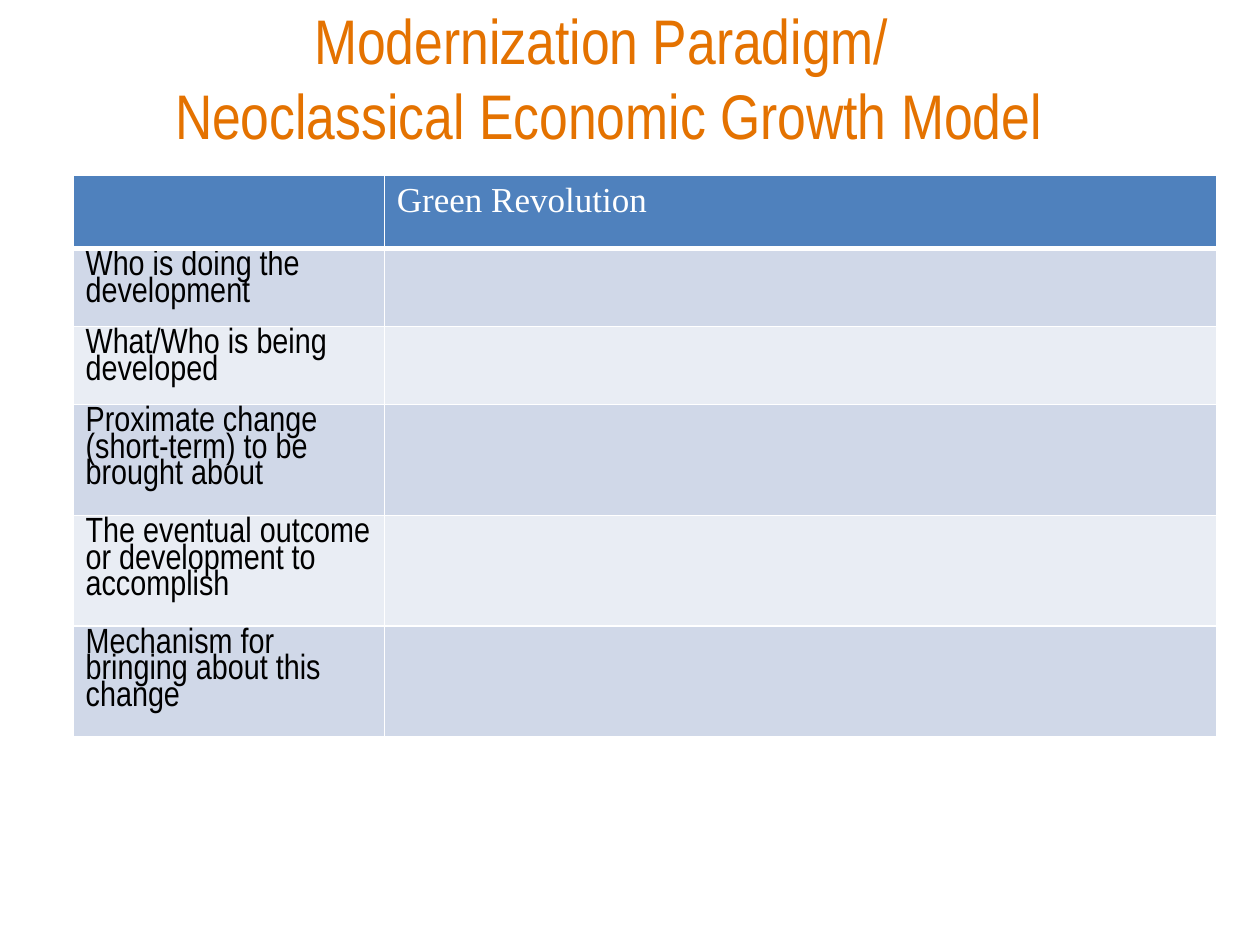
"""Builds the Green Revolution slide on the modernization paradigm."""
from lxml import etree
from pptx import Presentation
from pptx.dml.color import RGBColor
from pptx.enum import text
from pptx.oxml import ns
from pptx.util import Inches, Pt

ORANGE = RGBColor(0xE4, 0x72, 0x00)
BLUE = RGBColor(0x4F, 0x81, 0xBD)
BANDS = RGBColor(0xD0, 0xD8, 0xE8), RGBColor(0xE9, 0xED, 0xF4)
WHITE = RGBColor(0xFF, 0xFF, 0xFF)
BLACK = RGBColor(0x00, 0x00, 0x00)

TITLE = "Modernization Paradigm/ \vNeoclassical Economic Growth Model"
ROWS = [
    ("", "Green Revolution", 0.58),
    ("Who is doing the development", "", 0.62),
    ("What/Who is being developed", "", 0.62),
    ("Proximate change (short-term) to be brought about", "", 0.88),
    ("The eventual outcome or development to accomplish", "", 0.88),
    ("Mechanism for bringing about this change", "", 0.88),
]


class Deck:
    narrow = "Arial Narrow"
    serif = "Times New Roman"

    def __init__(self):
        self.prs = Presentation()
        self.prs.slide_width, self.prs.slide_height = Inches(10), Inches(7.5)
        self.slide = self.prs.slides.add_slide(self.prs.slide_layouts[5])

    def style(self, para, font, size, color):
        for run in para.runs:
            run.font.name, run.font.size = font, Pt(size)
            run.font.bold = False
            run.font.color.rgb = color

    def title(self, words, left, top, width, height):
        box = self.slide.shapes.title
        box.left, box.top = Inches(left), Inches(top)
        box.width, box.height = Inches(width), Inches(height)
        frame = box.text_frame
        frame.text = words
        frame.auto_size = text.MSO_AUTO_SIZE.NONE
        frame.vertical_anchor = text.MSO_ANCHOR.MIDDLE
        para = frame.paragraphs[0]
        para.alignment = text.PP_ALIGN.CENTER
        self.style(para, self.narrow, 36, ORANGE)

    def border(self, cell, base):
        props = cell._tc.get_or_add_tcPr()
        widths = ("L", 1), ("R", 1), ("T", 1), ("B", base)
        for spot, (side, width) in enumerate(widths):
            line = etree.Element(ns.qn(f"a:ln{side}"), w=str(Pt(width)))
            fill = etree.SubElement(line, ns.qn("a:solidFill"))
            etree.SubElement(fill, ns.qn("a:srgbClr"), val=str(WHITE))
            props.insert(spot, line)

    def cell(self, cell, words, head, fill):
        cell.fill.solid()
        cell.fill.fore_color.rgb = fill
        self.border(cell, 3 if head else 1)
        if words:
            cell.text_frame.text = words
            para = cell.text_frame.paragraphs[0]
            if head:
                self.style(para, self.serif, 20, WHITE)
            else:
                para.line_spacing = 0.8
                self.style(para, self.narrow, 20, BLACK)

    def table(self, rows, left, top, widths):
        tall = sum(row[-1] for row in rows)
        grid = self.slide.shapes.add_table(
            len(rows), len(widths), Inches(left), Inches(top),
            Inches(sum(widths)), Inches(tall)).table
        for col, width in zip(grid.columns, widths):
            col.width = Inches(width)
        for r, (*words, height) in enumerate(rows):
            grid.rows[r].height = Inches(height)
            fill = BANDS[(r - 1) % 2] if r else BLUE
            for c, word in enumerate(words):
                self.cell(grid.cell(r, c), word, r == 0, fill)


def main():
    deck = Deck()
    deck.title(TITLE, 0.58, 0.22, 8.5, 0.78)
    deck.table(ROWS, 0.58, 1.39, (2.47, 6.61))
    deck.prs.save("out.pptx")


if __name__ == "__main__":
    main()
